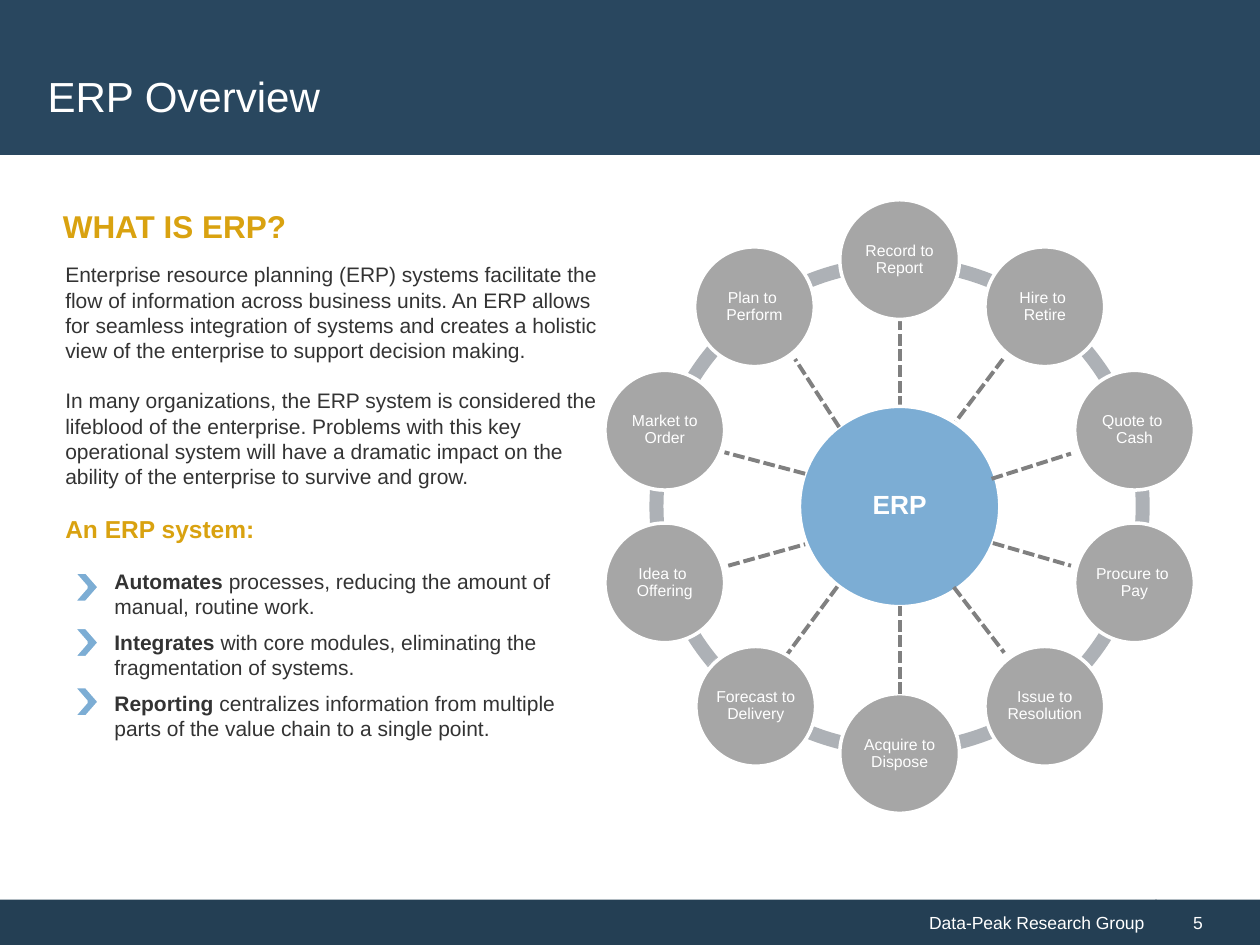
from dataclasses import dataclass
from math import cos, radians, sin

from lxml import etree
from pptx import Presentation
from pptx.dml.color import RGBColor
from pptx.enum.dml import MSO_LINE
from pptx.enum.shapes import MSO_CONNECTOR, MSO_SHAPE as Preset
from pptx.enum.text import MSO_ANCHOR as Anchor, PP_ALIGN as Align
from pptx.oxml.ns import qn
from pptx.util import Inches, Pt

WHITE = RGBColor(0xFF, 0xFF, 0xFF)
NAVY = RGBColor(0x29, 0x47, 0x5F)
DARK_NAVY = RGBColor(0x24, 0x3F, 0x54)
GOLD = RGBColor(0xD9, 0xA2, 0x10)
INK = RGBColor(0x33, 0x33, 0x33)
BLUE = RGBColor(0x7C, 0xAD, 0xD4)
GREY = RGBColor(0xA6, 0xA6, 0xA6)
RING_GREY = RGBColor(0xAD, 0xB1, 0xB6)
DASH_GREY = RGBColor(0x80, 0x80, 0x80)

CENTRE_X, CENTRE_Y = 7.14, 4.02
ORBIT = 1.96
STEP_SIZE, HUB_SIZE, RING_SIZE = 0.95, 1.59, 3.97
RING_START, RING_SWEEP = 10.8, 21.6


@dataclass(frozen=True)
class Spoke:
    x1: float
    y1: float
    x2: float
    y2: float


@dataclass(frozen=True)
class Step:
    label: str
    position: int  # clockwise from the top
    shift: float = 0


@dataclass(frozen=True)
class Benefit:
    keyword: str
    rest: str
    marker_top: float


STEPS = [
    Step("Record to Report", 0), Step("Hire to \vRetire", 1),
    Step("Quote to \vCash", 2), Step("Procure to \vPay", 3),
    Step("Issue to Resolution", 4), Step("Acquire to Dispose", 5),
    Step("Idea to \vOffering", 7), Step("Market to Order", 8),
    Step("Plan to \vPerform", 9),
]
FRONT_STEP = Step("Forecast to Delivery", 6, shift=0.01)

SPOKES_BEHIND = [Spoke(7.14, 3.24, 7.14, 2.47), Spoke(7.53, 3.42, 7.96, 2.85)]
SPOKES_IN_FRONT = [
    Spoke(6.66, 3.39, 6.31, 2.85), Spoke(6.39, 3.76, 5.75, 3.59),
    Spoke(5.78, 4.49, 6.39, 4.32), Spoke(6.22, 5.23, 6.65, 4.65),
    Spoke(7.14, 5.51, 7.14, 4.81), Spoke(7.88, 4.31, 8.5, 4.49),
    Spoke(7.87, 3.8, 8.5, 3.6), Spoke(7.57, 4.66, 7.97, 5.18),
]

INTRO = [
    "Enterprise resource planning (ERP) systems facilitate the flow of "
    "information across business units. An ERP allows for seamless integration "
    "of systems and creates a holistic view of the enterprise to support "
    "decision making.",
    "In many organizations, the ERP system is considered the lifeblood of the "
    "enterprise. Problems with this key operational system will have a dramatic "
    "impact on the ability of the enterprise to survive and grow.",
]
BENEFITS = [
    Benefit("Automates", " processes, reducing the amount of manual, routine "
            "work.", 4.54),
    Benefit("Integrates", " with core modules, eliminating the fragmentation of "
            "systems.", 4.98),
    Benefit("Reporting", " centralizes information from multiple parts of the "
            "value chain to a single point.", 5.45),
]


def add_run(paragraph, text: str, size: float, color: RGBColor,
            bold: bool = False) -> None:
    for index, part in enumerate(text.split("\v")):
        if index:
            paragraph.add_line_break()
        run = paragraph.add_run()
        run.text = part
        run.font.name = "Arial"
        run.font.size = Pt(size)
        run.font.bold = bold
        run.font.color.rgb = color


def add_filled(slide, preset, left: float, top: float, width: float,
               height: float, fill: RGBColor, outlined: bool = False):
    shape = slide.shapes.add_shape(preset, Inches(left), Inches(top),
                                   Inches(width), Inches(height))
    shape.shadow.inherit = False
    shape.fill.solid()
    shape.fill.fore_color.rgb = fill
    if outlined:
        shape.line.color.rgb = WHITE
        shape.line.width = Pt(2)
    else:
        shape.line.fill.background()
    return shape


def add_text_box(slide, left: float, top: float, width: float, height: float,
                 wrap: bool = True):
    frame = slide.shapes.add_textbox(Inches(left), Inches(top), Inches(width),
                                     Inches(height)).text_frame
    frame.word_wrap = wrap
    return frame


def add_footer(slide, left: float, width: float, text: str, align,
               indent: float) -> None:
    frame = add_filled(slide, Preset.RECTANGLE, left, 7.14, width, 0.37,
                       DARK_NAVY).text_frame
    frame.vertical_anchor = Anchor.MIDDLE
    frame.margin_left = Inches(indent)
    frame.paragraphs[0].alignment = align
    add_run(frame.paragraphs[0], text, 10, WHITE)


def add_circle(slide, x: float, y: float, diameter: float, fill: RGBColor,
               label: str, size: float, bold: bool = False) -> None:
    frame = add_filled(slide, Preset.OVAL, x - diameter / 2, y - diameter / 2,
                       diameter, diameter, fill, outlined=True).text_frame
    frame.word_wrap = True
    frame.vertical_anchor = Anchor.MIDDLE
    frame.margin_left = frame.margin_right = Inches(0)
    frame.margin_top = frame.margin_bottom = Inches(0)
    paragraph = frame.paragraphs[0]
    paragraph.alignment = Align.CENTER
    paragraph.line_spacing = 0.9
    add_run(paragraph, label, size, WHITE, bold)


def add_step(slide, step: Step) -> None:
    angle = radians(36 * step.position - 90)
    add_circle(slide, CENTRE_X + ORBIT * cos(angle) + step.shift,
               CENTRE_Y + ORBIT * sin(angle), STEP_SIZE, GREY, step.label, 9)


def add_spoke(slide, spoke: Spoke) -> None:
    line = slide.shapes.add_connector(
        MSO_CONNECTOR.STRAIGHT, Inches(spoke.x1), Inches(spoke.y1),
        Inches(spoke.x2), Inches(spoke.y2))
    line.line.color.rgb = DASH_GREY
    line.line.width = Pt(2.25)
    line.line.dash_style = MSO_LINE.SQUARE_DOT
    etree.SubElement(line._element.spPr, qn("a:effectLst"))


def add_ring(slide) -> None:
    starts = [RING_START + RING_SWEEP * i for i in range(10)]
    for start, end in zip(starts, starts[1:] + starts[:1]):
        arc = add_filled(slide, Preset.BLOCK_ARC, CENTRE_X - RING_SIZE / 2,
                         CENTRE_Y - RING_SIZE / 2, RING_SIZE, RING_SIZE,
                         RING_GREY)
        # Angles are stored in 60000ths of a degree, adjustments in 100000ths
        arc.adjustments[0] = start * 0.6
        arc.adjustments[1] = end * 0.6
        arc.adjustments[2] = 0.028


def add_description(slide) -> None:
    frame = add_text_box(slide, 0.42, 2.03, 4.43, 3.94)
    paragraphs = [frame.paragraphs[0]]
    paragraphs += [frame.add_paragraph() for _ in range(5)]
    for paragraph, text in zip(paragraphs, INTRO):
        add_run(paragraph, text, 12, INK)
        paragraph.space_after = Pt(14.4)
    add_run(paragraphs[2], "An ERP system:", 14, GOLD, bold=True)
    paragraphs[2].space_after = Pt(14.4)
    for paragraph, benefit in zip(paragraphs[3:], BENEFITS):
        paragraph._p.get_or_add_pPr().set("marL", str(Inches(0.39)))
        paragraph.space_after = Pt(6)
        add_run(paragraph, benefit.keyword, 12, INK, bold=True)
        add_run(paragraph, benefit.rest, 12, INK)


def main() -> None:
    deck = Presentation()
    deck.slide_width, deck.slide_height = Inches(10), Inches(7.5)
    slide = deck.slides.add_slide(deck.slide_layouts[6])

    # Footer and title bands
    add_footer(slide, 0, 9.18, "Data-Peak Research Group", Align.RIGHT, 0.39)
    add_footer(slide, 9.17, 0.83, "5", Align.LEFT, 0.3)
    add_filled(slide, Preset.RECTANGLE, 0, 0, 10, 1.23, NAVY)
    title = add_text_box(slide, 0.28, 0.28, 9.43, 0.96)
    title.vertical_anchor = Anchor.MIDDLE
    add_run(title.paragraphs[0], "ERP Overview", 24, WHITE)

    # Description
    add_description(slide)
    heading = add_text_box(slide, 0.4, 1.59, 1.99, 0.4, wrap=False)
    add_run(heading.paragraphs[0], "WHAT IS ERP?", 18, GOLD, bold=True)
    for benefit in BENEFITS:
        add_filled(slide, Preset.CHEVRON, 0.58, benefit.marker_top, 0.21, 0.24,
                   BLUE, outlined=True)

    # Process wheel
    for spoke in SPOKES_BEHIND:
        add_spoke(slide, spoke)
    add_ring(slide)
    for step in STEPS:
        add_step(slide, step)
    add_circle(slide, CENTRE_X, CENTRE_Y, HUB_SIZE, BLUE, "ERP", 15, bold=True)
    for spoke in SPOKES_IN_FRONT:
        add_spoke(slide, spoke)
    add_step(slide, FRONT_STEP)

    deck.save("out.pptx")


if __name__ == "__main__":
    main()
